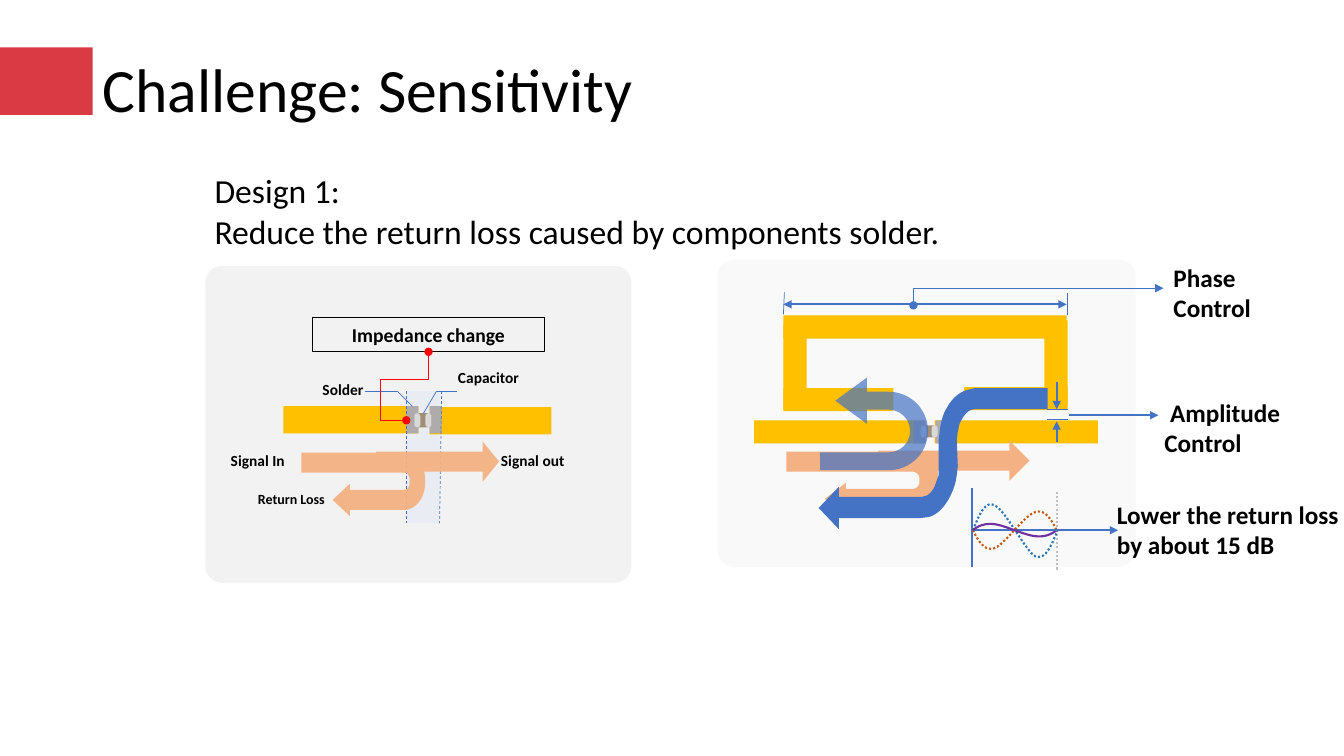
from lxml.etree import SubElement as Sub
from pptx import Presentation
from pptx.dml.color import RGBColor
from pptx.enum.dml import MSO_LINE as Dash
from pptx.enum.shapes import MSO_CONNECTOR as Conn, MSO_SHAPE as Shape
from pptx.enum.text import PP_ALIGN as Align
from pptx.oxml.ns import qn
from pptx.util import Inches, Pt

HEX = dict(red="D20D19", mark="FF0000", panel="F2F2F2", white="FFFFFF", gold="FFC000",
           solder="AFABAB", body="A08E76", tip="D9D9D9", peach="F4B183", blue="4472C4",
           pale="DAE3F3", sky="2E75B6", rust="C55A11", plum="7030A0", grey="BFBFBF",
           black="000000")

# Text: left, top, width, height, size, bold, lines
HEADS = [
    (0.92, 0.46, 11.5, 1.45, 44, False, ["Challenge: Sensitivity"]),
    (2.03, 1.64, 8.03, 0.91, 24, False,
     ["Design 1:", "Reduce the return loss caused by components solder."]),
]
LABELS = [
    (3.1, 3.72, 1.01, 0.29, 11, True, ["Solder"]),
    (4.41, 3.6, 1.24, 0.29, 11, True, [" Capacitor"]),
    (2.35, 4.82, 1.08, 0.27, 10, True, ["Return Loss"]),
    (2.19, 4.43, 0.91, 0.29, 11, True, ["Signal In"]),
    (4.87, 4.43, 0.99, 0.29, 11, True, ["Signal out"]),
    (10.98, 4.9, 2.55, 0.71, 18, True, ["Lower the return loss by about 15 dB"]),
    (11.45, 3.89, 1.41, 0.71, 18, True, [" Amplitude", "Control"]),
    (11.54, 2.55, 1.41, 0.71, 18, True, ["Phase Control"]),
]

# Bars: left, top, width, height, colour
RIGHT = [
    (7.48, 4.17, 1.68, 0.23, "gold"), (9.27, 4.17, 1.62, 0.23, "gold"),
    (9.06, 4.17, 0.12, 0.23, "solder"), (9.28, 4.17, 0.12, 0.23, "solder"),
]
LOOP = [
    (7.77, 3.13, 2.81, 0.23, "gold"), (7.77, 3.22, 0.23, 0.84, "gold"),
    (10.36, 3.18, 0.23, 0.84, "gold"), (7.77, 3.85, 1.09, 0.23, "gold"),
    (9.56, 3.84, 1.03, 0.23, "gold"),
]
LEFT = [
    (2.81, 4.03, 1.34, 0.27, "gold"), (4.26, 4.04, 1.21, 0.27, "gold"),
    (4.03, 4.03, 0.12, 0.27, "solder"), (4.26, 4.03, 0.12, 0.27, "solder"),
]

# Outlines: a pair is a corner, six numbers are a curve
SIGNAL = [
    (10.01, 4.37), (10.21, 4.57), (10.01, 4.77), (10.01, 4.67), (9.3, 4.67), (9.31, 4.75),
    (9.31, 4.78), (9.31, 4.93, 9.19, 5.05, 9.05, 5.05), (8.39, 5.05), (8.39, 5.11),
    (8.18, 4.95), (8.39, 4.79), (8.39, 4.85), (9.05, 4.85),
    (9.09, 4.85, 9.12, 4.82, 9.12, 4.78), (9.12, 4.75),
    (9.12, 4.71, 9.09, 4.68, 9.05, 4.68), (7.8, 4.68), (7.8, 4.48), (8.71, 4.48),
    (8.71, 4.47), (10.01, 4.47),
]
COUPLED = [
    (9.67, 3.85), (10.39, 3.85), (10.39, 4.06), (9.67, 4.06),
    (9.61, 4.06, 9.56, 4.11, 9.52, 4.2), (9.51, 4.22, 9.51, 4.25, 9.5, 4.28),
    (9.49, 4.37), (9.5, 4.62), (9.49, 4.71), (9.48, 4.8, 9.45, 4.88, 9.41, 4.95),
    (9.36, 5.04, 9.29, 5.11, 9.21, 5.13), (9.13, 5.14), (8.32, 5.14), (8.32, 5.25),
    (8.12, 5.04), (8.32, 4.83), (8.32, 4.93), (9.14, 4.93), (9.18, 4.92),
    (9.22, 4.91, 9.26, 4.86, 9.28, 4.8), (9.29, 4.77, 9.3, 4.74, 9.31, 4.72),
    (9.31, 4.37), (9.32, 4.28), (9.33, 4.2, 9.35, 4.11, 9.39, 4.05),
    (9.44, 3.95, 9.52, 3.89, 9.59, 3.87),
]
WAVES = [
    ("sky", Dash.ROUND_DOT, [(9.65, 5.26), (9.71, 5.12, 9.76, 4.97, 9.86, 5.01),
     (9.97, 5.05, 10.17, 5.47, 10.27, 5.52), (10.37, 5.56, 10.43, 5.41, 10.49, 5.26)]),
    ("rust", Dash.ROUND_DOT, [(9.65, 5.26), (9.7, 5.36, 9.76, 5.47, 9.86, 5.44),
     (9.96, 5.41, 10.16, 5.11, 10.27, 5.08), (10.37, 5.05, 10.43, 5.16, 10.48, 5.26)]),
    ("plum", None, [(9.65, 5.26), (9.7, 5.22, 9.76, 5.19, 9.86, 5.2),
     (9.96, 5.21, 10.16, 5.31, 10.27, 5.32), (10.37, 5.33, 10.43, 5.3, 10.48, 5.26)]),
]

# Lines: x1, y1, x2, y2, width, then optional colour, dash, head, tail
AXES = [
    (9.64, 5.26, 10.79, 5.26, 1.5), (9.64, 5.63, 9.64, 4.84, 1.5),
    (10.48, 5.65, 10.48, 4.87, 1.5, "grey", Dash.ROUND_DOT),
]
LEADS = [
    (4.03, 3.88, 4.03, 5.19, 0.5, "blue", Dash.DASH),
    (4.38, 3.88, 4.36, 5.19, 0.5, "blue", Dash.DASH),
    (4.09, 4.03, 3.94, 3.88, 0.5), (3.94, 3.88, 3.62, 3.88, 0.5),
    (4.53, 3.88, 4.33, 3.88, 0.5), (4.2, 4.1, 4.33, 3.88, 0.5),
]
TIP = ("blue", None, None, "triangle")
CALLS = [
    (10.21, 5.26, 11.09, 5.26, 1.5, *TIP), (10.6, 4.12, 11.49, 4.12, 1.5, *TIP),
    (10.38, 4.06, 10.59, 4.06, 0.5), (10.38, 4.16, 10.59, 4.16, 0.5),
    (10.48, 3.79, 10.48, 4.06, 1.5, *TIP), (10.48, 4.39, 10.48, 4.18, 1.5, *TIP),
    (7.77, 3.02, 10.58, 3.02, 1.5, "blue", None, "triangle", "triangle"),
    (10.59, 3.13, 10.59, 2.91, 0.5), (7.77, 3.12, 7.78, 2.9, 0.5),
]

deck = Presentation()
deck.slide_width, deck.slide_height = Inches(13.33), Inches(7.5)
shapes = deck.slides.add_slide(deck.slide_layouts[6]).shapes


def paint(shape, fill, alpha=100, edge=None, width=1):
    shape.shadow.inherit = False
    if fill:
        shape.fill.solid()
        shape.fill.fore_color.rgb = RGBColor.from_string(HEX[fill])
        if alpha < 100:
            tint = shape.fill._xPr.find(".//" + qn("a:srgbClr"))
            Sub(tint, qn("a:alpha"), val=str(alpha * 1000))
    else:
        shape.fill.background()
    if edge:
        shape.line.color.rgb = RGBColor.from_string(HEX[edge])
        shape.line.width = Pt(width)
    else:
        shape.line.fill.background()


def block(x, y, w, h, fill, alpha=100, kind=Shape.RECTANGLE, adj=(), edge=None, width=1):
    shape = shapes.add_shape(kind, Inches(x), Inches(y), Inches(w), Inches(h))
    for i, value in enumerate(adj):
        shape.adjustments[i] = value
    paint(shape, fill, alpha, edge, width)
    return shape


def write(shape, size, bold, lines, align=Align.LEFT):
    frame = shape.text_frame
    frame.word_wrap = True
    frame.text = "\n".join(lines)
    for para in frame.paragraphs:
        para.alignment = align
        for run in para.runs:
            run.font.name, run.font.size, run.font.bold = "Calibri", Pt(size), bold
            run.font.color.rgb = RGBColor.from_string(HEX["black"])


def label(x, y, w, h, size, bold, lines):
    box = shapes.add_textbox(Inches(x), Inches(y), Inches(w), Inches(h))
    align = Align.CENTER if size == 10 else Align.LEFT
    write(box, size, bold, lines, align)
    return box


def trace(steps, closed):
    dots = []
    for step in steps:
        if len(step) == 2:
            dots.append(step)
            continue
        ends = [dots[-1], step[:2], step[2:4], step[4:]]
        for t in (n / 10 for n in range(1, 11)):
            mix = ((1 - t) ** 3, 3 * t * (1 - t) ** 2, 3 * t * t * (1 - t), t ** 3)
            dots.append(tuple(sum(m * e[k] for m, e in zip(mix, ends)) for k in (0, 1)))
    pts = [(Inches(x), Inches(y)) for x, y in dots]
    pen = shapes.build_freeform(*pts[0])
    pen.add_line_segments(pts[1:], close=closed)
    return pen.convert_to_shape()


def line(x1, y1, x2, y2, width, color="blue", dash=None, head=None, tail=None,
         kind=Conn.STRAIGHT):
    link = shapes.add_connector(kind, Inches(x1), Inches(y1), Inches(x2), Inches(y2))
    link.line.color.rgb = RGBColor.from_string(HEX[color])
    link.line.width = Pt(width)
    if dash:
        link.line.dash_style = dash
    for tag, end in (("a:headEnd", head), ("a:tailEnd", tail)):
        if end:
            Sub(link.line._get_or_add_ln(), qn(tag), type=end)
    Sub(link._element.spPr, qn("a:effectLst"))
    return link


def elbow(link, preset, adj, turn=0):
    props = link._element.spPr
    props.find(qn("a:xfrm")).set("rot", str(turn * 60000))
    geom = props.find(qn("a:prstGeom"))
    geom.set("prst", preset)
    guides = geom.find(qn("a:avLst"))
    if guides is None:
        guides = Sub(geom, qn("a:avLst"))
    for i, value in enumerate(adj, 1):
        Sub(guides, qn("a:gd"), name=f"adj{i}", fmla=f"val {round(value * 100000)}")


def panel(x, y, w, h, alpha=100):
    block(x, y, w, h, "panel", alpha, Shape.ROUNDED_RECTANGLE, [0.054], "white")


def part(x, y, w, h):
    for dx, wide, fill, bend in ((0, w, "body", 0.293), (0, 0.06, "tip", 0.498),
                                 (0.11, 0.06, "tip", 0.498)):
        block(x + dx, y, wide, h, fill, 100, Shape.ROUNDED_RECTANGLE, [bend])


def draw(make, rows):
    for row in rows:
        make(*row)


# Right panel: track, capacitor and signal flow
block(0, 0.47, 0.92, 0.67, "red", 81)
panel(7.11, 2.57, 4.16, 3.06, 45)
draw(block, RIGHT)
part(9.13, 4.22, 0.16, 0.12)
paint(trace(SIGNAL, True), "peach")

# Headings
draw(label, HEADS)

# Coupling loop and its flow
draw(block, LOOP)
uturn = block(8.21, 3.67, 0.92, 1.07, "blue", 70, Shape.U_TURN_ARROW,
              [0.193, 0.25, 0.342, 0.438, 0.86])
uturn.rotation = 90
uturn._element.spPr.find(qn("a:xfrm")).set("flipH", "1")
paint(trace(COUPLED, True), "blue")

# Wave plot
draw(line, AXES)
for color, dash, steps in WAVES:
    wave = trace(steps, False)
    paint(wave, None, edge=color, width=1.5)
    if dash:
        wave.line.dash_style = dash

# Left panel: plain track with solder joint
panel(2.03, 2.63, 4.24, 3.16)
block(4.03, 3.88, 0.33, 1.31, "pale", 36)
draw(block, LEFT)
part(4.11, 4.1, 0.17, 0.14)
draw(line, LEADS)
note = block(3.1, 3.15, 2.3, 0.34, None, edge="black", width=0.75)
write(note, 14, True, ["Impedance change"], Align.CENTER)
bend = line(3.8, 3.72, 4.48, 3.94, 0.75, "mark", None, "oval", "oval", Conn.ELBOW)
elbow(bend, "bentConnector4", [0.4, 2.157], 90)
ratio = 1.96 / 2.41
near = [tuple(v + 0.01 if k % 2 else 2.99 + (v - 7.8) * ratio for k, v in enumerate(step))
        for step in SIGNAL]
paint(trace(near, True), "peach", 95)

# Labels and callouts
draw(label, LABELS)
draw(line, CALLS)
phase = line(9.06, 3.03, 11.54, 2.86, 0.5, "blue", None, "oval", "triangle", Conn.ELBOW)
elbow(phase, "bentConnector3", [0])

deck.save("out.pptx")
